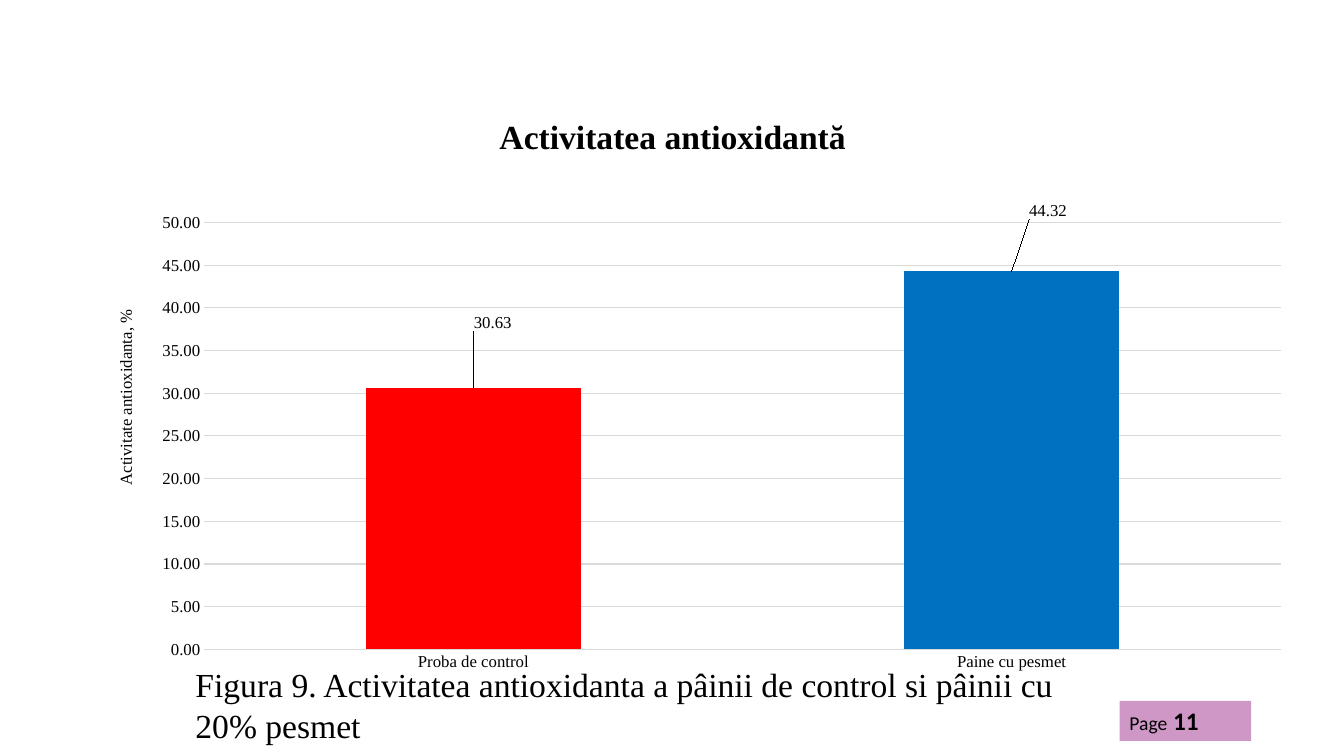
from lxml import etree
from pptx import Presentation
from pptx.chart.data import CategoryChartData
from pptx.dml.color import RGBColor
from pptx.enum.chart import XL_CHART_TYPE as ChartType, XL_LABEL_POSITION as LabelPosition
from pptx.enum.chart import XL_TICK_MARK as TickMark
from pptx.enum.shapes import MSO_SHAPE as Shape
from pptx.enum.text import MSO_ANCHOR as Anchor, PP_ALIGN as Align
from pptx.oxml.ns import qn
from pptx.util import Inches, Pt

BLACK = RGBColor(0x00, 0x00, 0x00)
GRID = RGBColor(0xD9, 0xD9, 0xD9)
CONTROL = RGBColor(0xFF, 0x00, 0x00)
RUSK = RGBColor(0x00, 0x70, 0xC0)
PURPLE = RGBColor(0x9F, 0x31, 0x8D)
SERIF, SANS = "Times New Roman", "Calibri"
WIDTH, HEIGHT = 13.33, 7.5

# Category, value, bar colour, label shift as shares of the chart
BARS = [
    ("Proba de control", 30.63, CONTROL, (0.016, -0.11)),
    ("Paine cu pesmet", 44.32, RUSK, (0.03, -0.1)),
]


def area(left, top, width, height):
    """Turn shares of the slide into lengths."""
    return (Inches(WIDTH * left), Inches(HEIGHT * top),
            Inches(WIDTH * width), Inches(HEIGHT * height))


def style(font, size, name=SERIF, bold=False):
    font.size, font.name, font.bold = Pt(size), name, bold
    font.color.rgb = BLACK


def add_run(paragraph, text, size, name=SERIF, bold=False):
    run = paragraph.add_run()
    run.text = text
    style(run.font, size, name, bold)


def set_layout(element, index, **settings):
    """Place a chart part by hand, in shares of the chart."""
    for old in element.findall(qn("c:layout")):
        element.remove(old)
    layout = etree.Element(qn("c:layout"))
    manual = etree.SubElement(layout, qn("c:manualLayout"))
    for tag, value in settings.items():
        etree.SubElement(manual, qn(f"c:{tag}")).set("val", str(value))
    element.insert(index, layout)


def add_title(slide):
    title = slide.shapes.title
    title.left, title.top, title.width, title.height = area(0.069, 0.121, 0.863, 0.125)
    title.text_frame.vertical_anchor = Anchor.MIDDLE
    paragraph = title.text_frame.paragraphs[0]
    paragraph.alignment, paragraph.line_spacing = Align.CENTER, 0.9
    add_run(paragraph, "Activitatea antioxidantă", 24, bold=True)


def add_page_tag(slide):
    tag = slide.shapes.add_shape(Shape.RECTANGLE, *area(0.833, 0.927, 0.098, 0.053))
    tag.shadow.inherit = False
    tag.line.fill.background()
    tag.fill.solid()
    tag.fill.fore_color.rgb = PURPLE
    color = tag.fill._xPr.find(qn("a:solidFill"))[0]
    etree.SubElement(color, qn("a:alpha")).set("val", "50000")
    paragraph = tag.text_frame.paragraphs[0]
    paragraph.alignment = Align.LEFT
    add_run(paragraph, "Page", 14, SANS)
    add_run(paragraph, " 11", 18, SANS, bold=True)


def format_axes(chart):
    for axis in (chart.category_axis, chart.value_axis):
        axis.major_tick_mark = axis.minor_tick_mark = TickMark.NONE
        axis.format.line.fill.background()
        style(axis.tick_labels.font, 12)
    values = chart.value_axis
    values.minimum_scale, values.maximum_scale, values.major_unit = 0, 50, 5
    values.tick_labels.number_format = "0.00"
    values.tick_labels.number_format_is_linked = False
    values.major_gridlines.format.line.color.rgb = GRID
    values.major_gridlines.format.line.width = Pt(0.75)
    add_run(values.axis_title.text_frame.paragraphs[0], "Activitate antioxidanta, %", 12)
    set_layout(chart.element.xpath(".//c:valAx/c:title")[0], 1,
               xMode="edge", yMode="edge", x=0.016, y=0.215)


def add_activity_chart(slide):
    data = CategoryChartData(number_format="0.00")
    data.categories = [bar[0] for bar in BARS]
    data.add_series("Series 1", [bar[1] for bar in BARS])
    chart = slide.shapes.add_chart(
        ChartType.COLUMN_CLUSTERED, *area(0.069, 0.267, 0.902, 0.635), data).chart
    chart.has_title = chart.has_legend = False
    style(chart.font, 10, SANS)
    plot = chart.plots[0]
    plot.gap_width, plot.vary_by_categories = 150, False
    format_axes(chart)
    set_layout(chart.element.xpath(".//c:plotArea")[0], 0, layoutTarget="inner",
               xMode="edge", yMode="edge", x=0.092, y=0.036, w=0.888, h=0.896)

    # Bar colours and shifted value labels
    for index, (_, _, color, (dx, dy)) in enumerate(BARS):
        point = plot.series[0].points[index]
        point.format.fill.solid()
        point.format.fill.fore_color.rgb = color
        style(point.data_label.font, 12)
        point.data_label.position = LabelPosition.OUTSIDE_END
        set_layout(chart.element.xpath(".//c:dLbl")[index], 1, x=dx, y=dy)


def add_caption(slide):
    caption = slide.shapes.add_textbox(*area(0.138, 0.872, 0.686, 0.161)).text_frame
    caption.word_wrap = True
    add_run(caption.paragraphs[0], "Figura 9. Activitatea antioxidanta a pâinii de control "
            "si pâinii cu 20% pesmet", 24)


def main():
    deck = Presentation()
    deck.slide_width, deck.slide_height = Inches(WIDTH), Inches(HEIGHT)
    slide = deck.slides.add_slide(deck.slide_layouts[5])
    add_title(slide)
    add_page_tag(slide)
    add_activity_chart(slide)
    add_caption(slide)
    deck.save("out.pptx")


if __name__ == "__main__":
    main()
